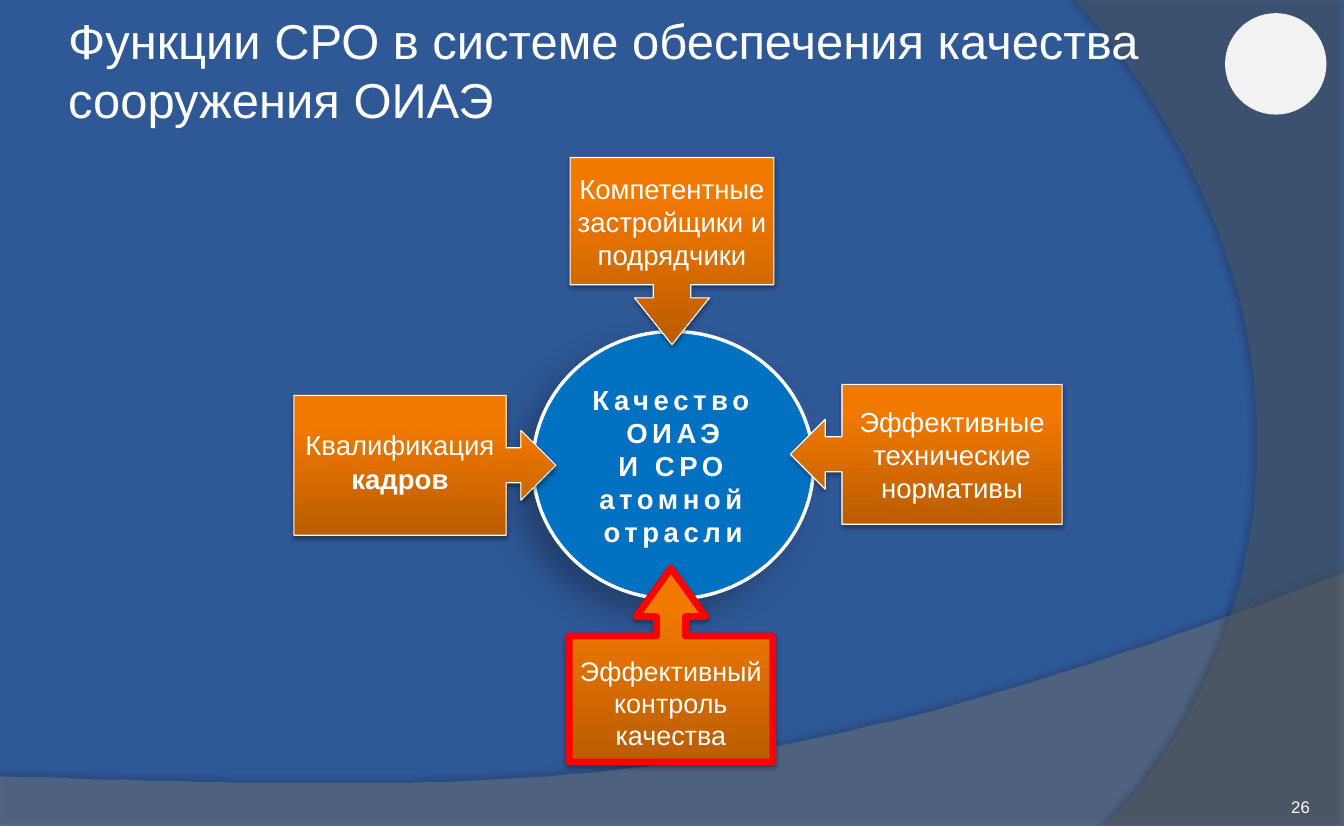
from dataclasses import dataclass

from lxml.etree import SubElement
from pptx import Presentation
from pptx.dml.color import RGBColor as Rgb
from pptx.enum.shapes import MSO_SHAPE as Shape
from pptx.enum.text import MSO_ANCHOR as Anchor, PP_ALIGN as Align
from pptx.oxml.ns import qn
from pptx.util import Pt

SCALE = 9144
WIDTH, HEIGHT = 1221, 750


@dataclass(frozen=True)
class Theme:
    """Colours, type sizes and shadows of the slide."""
    font: str = "Arial"
    back: str = "2F5897"
    white: str = "FFFFFF"
    badge: str = "F2F2F2"
    core: str = "0070C0"
    alert: str = "FF0000"
    orange_dark: str = "BB5D00"
    orange: str = "F27900"
    wave: str = "7F7F7F"
    arc: str = "5E5E5E"
    title: float = 32
    body: float = 18
    small: float = 17.6
    number: float = 11
    wave_shadow: tuple = (35, 4, 3.5, 270)
    arc_shadow: tuple = (45, 4, 4, 180)
    core_shadow: tuple = (25, 19, 15, 136)
    callout_shadow: tuple = (35, 3.1, 1.8, 90)


THEME = Theme()


def emu(*lengths):
    """Turn px lengths into EMU."""
    return [length * SCALE for length in lengths]


def apply(target, values):
    """Set the attributes named in a dict."""
    for name, value in values.items():
        setattr(target, name, value)


def paint(shape, color, alpha=100):
    """Give a shape a solid fill."""
    shape.fill.solid()
    shape.fill.fore_color.rgb = Rgb.from_string(color)
    if alpha < 100:
        node = shape._element.spPr.find(".//" + qn("a:srgbClr"))
        SubElement(node, qn("a:alpha"), val=str(alpha * 1000))


def outline(shape, color=None, width=0):
    """Give a shape a line, or none."""
    if color:
        shape.line.color.rgb = Rgb.from_string(color)
        shape.line.width = Pt(width)
    else:
        shape.line.fill.background()


def cast(shape, shadow=None):
    """Replace the inherited shadow by opacity, blur, distance and angle."""
    shape.shadow.inherit = False
    if shadow:
        opacity, blur, distance, angle = shadow
        effects = shape._element.spPr.find(qn("a:effectLst"))
        outer = SubElement(effects, qn("a:outerShdw"), blurRad=str(Pt(blur)), dist=str(Pt(distance)),
                           dir=str(angle * 60000), algn="ctr", rotWithShape="0")
        color = SubElement(outer, qn("a:srgbClr"), val="000000")
        SubElement(color, qn("a:alpha"), val=str(opacity * 1000))


def write(shape, paras, size, align=Align.CENTER, anchor=Anchor.MIDDLE, insets=(4, 4, 4, 4),
          bold=(), spacing=0):
    """Write paragraphs into a shape; bold lists the bold paragraph numbers."""
    frame = shape.text_frame
    sides = ("margin_left", "margin_top", "margin_right", "margin_bottom")
    apply(frame, {"word_wrap": True, "vertical_anchor": anchor, **dict(zip(sides, emu(*insets)))})
    for index, text in enumerate(paras):
        para = frame.paragraphs[0] if index == 0 else frame.add_paragraph()
        para.alignment = align
        span = para.add_run()
        span.text = text
        apply(span.font, {"name": THEME.font, "size": Pt(size), "bold": index in bold})
        span.font.color.rgb = Rgb.from_string(THEME.white)
        if spacing:
            span.font._element.set("spc", str(spacing * 100))


def bezier(start, first, second, end, steps=60):
    """Return points along a cubic curve, without its start."""
    points = []
    for step in range(1, steps + 1):
        t = step / steps
        weights = ((1 - t) ** 3, 3 * t * (1 - t) ** 2, 3 * t * t * (1 - t), t ** 3)
        points.append(tuple(round(sum(w * p[axis] for w, p in zip(weights, (start, first, second, end))), 2)
                            for axis in (0, 1)))
    return points


def add_sweep(page, corners, curve, color, alpha, shadow):
    """Draw a translucent area bounded by corners and one curve."""
    builder = page.shapes.build_freeform(*corners[0], scale=SCALE)
    builder.add_line_segments(corners[1:] + bezier(corners[-1], *curve), close=True)
    sweep = builder.convert_to_shape()
    paint(sweep, color, alpha)
    outline(sweep)
    cast(sweep, shadow)


def add_backdrop(page, box):
    """Draw the background, its two sweeps and the round badge."""
    left, top, width, height = box
    right, bottom = left + width, top + height
    page.background.fill.solid()
    page.background.fill.fore_color.rgb = Rgb.from_string(THEME.back)
    add_sweep(page, [(left, bottom - 45), (left, bottom), (right, bottom), (right, bottom - 230)],
              [(left + 682, bottom - 21), (left + 477, bottom - 31), (left, bottom - 45)],
              THEME.wave, 45, THEME.wave_shadow)
    add_sweep(page, [(right, top), (right, bottom), (right - 218, bottom)],
              [(right - 80, bottom - 131), (right + 21, top + 300), (right - 244, top)],
              THEME.arc, 40, THEME.arc_shadow)
    badge = page.shapes.add_shape(Shape.OVAL, *emu(right - 108, top + 12, 92, 92))
    paint(badge, THEME.badge)
    outline(badge)
    cast(badge)


def add_label(page, box, text, size, **layout):
    """Place a plain text box."""
    write(page.shapes.add_textbox(*emu(*box)), [text], size, **layout)


def add_core(page, box):
    """Draw the central circle."""
    core = page.shapes.add_shape(Shape.OVAL, *emu(*box))
    paint(core, THEME.core)
    outline(core, THEME.white, 2.25)
    cast(core, THEME.core_shadow)
    write(core, ["Качество ОИАЭ", "И СРО атомной отрасли"], THEME.body, bold=(0, 1), spacing=3)


def add_callout(page, box, kind, adjust, paras, size=THEME.body, line=(THEME.white, 0.75), **layout):
    """Draw an orange callout that points at the circle."""
    callout = page.shapes.add_shape(kind, *emu(*box))
    for index, value in enumerate(adjust):
        callout.adjustments[index] = value
    callout.fill.gradient()
    callout.fill.gradient_angle = 90
    stops = zip(callout.fill.gradient_stops, (THEME.orange_dark, THEME.orange), (0, 0.8))
    for stop, color, position in stops:
        stop.color.rgb = Rgb.from_string(color)
        stop.position = position
    outline(callout, *line)
    cast(callout, THEME.callout_shadow)
    write(callout, paras, size, **layout)


def add_diagram(page, box):
    """Draw the circle and the four callouts around it."""
    left, top, _, _ = box
    add_core(page, (left + 217, top + 158, 255, 243))
    add_callout(page, (left + 451, top + 206, 247, 127), Shape.LEFT_ARROW_CALLOUT,
                (0.25, 0.25, 0.25, 0.81), ["Эффективные технические нормативы"])
    add_callout(page, (left + 251, top, 185, 170), Shape.DOWN_ARROW_CALLOUT,
                (0.2, 0.2, 0.25, 0.68), ["Компетентные застройщики и подрядчики"])
    add_callout(page, (left + 250, top + 373, 185, 176), Shape.UP_ARROW_CALLOUT,
                (0.15, 0.18, 0.25, 0.65), ["Эффективный контроль качества"],
                THEME.small, (THEME.alert, 4.5), insets=(4, 11, 4, 4))
    add_callout(page, (left, top + 216, 238, 127), Shape.RIGHT_ARROW_CALLOUT,
                (0.25, 0.25, 0.25, 0.81), ["Квалификация", "кадров"], insets=(4, 4, 4, 11), bold=(1,))


def main():
    """Build and save the slide."""
    deck = Presentation()
    apply(deck, dict(zip(("slide_width", "slide_height"), emu(WIDTH, HEIGHT))))
    page = deck.slides.add_slide(deck.slide_layouts[6])
    add_backdrop(page, (0, 0, WIDTH, HEIGHT))
    add_label(page, (56, 39, 997, 48), "Функции СРО в системе обеспечения качества сооружения ОИАЭ",
              THEME.title, align=Align.LEFT, insets=(6, 6, 6, 6))
    add_label(page, (1088, 702, 102, 40), "26", THEME.number, align=Align.RIGHT,
              anchor=Anchor.BOTTOM, insets=(0, 0, 0, 0))
    add_diagram(page, (267, 143, 698, 549))
    deck.save("out.pptx")


if __name__ == "__main__":
    main()
